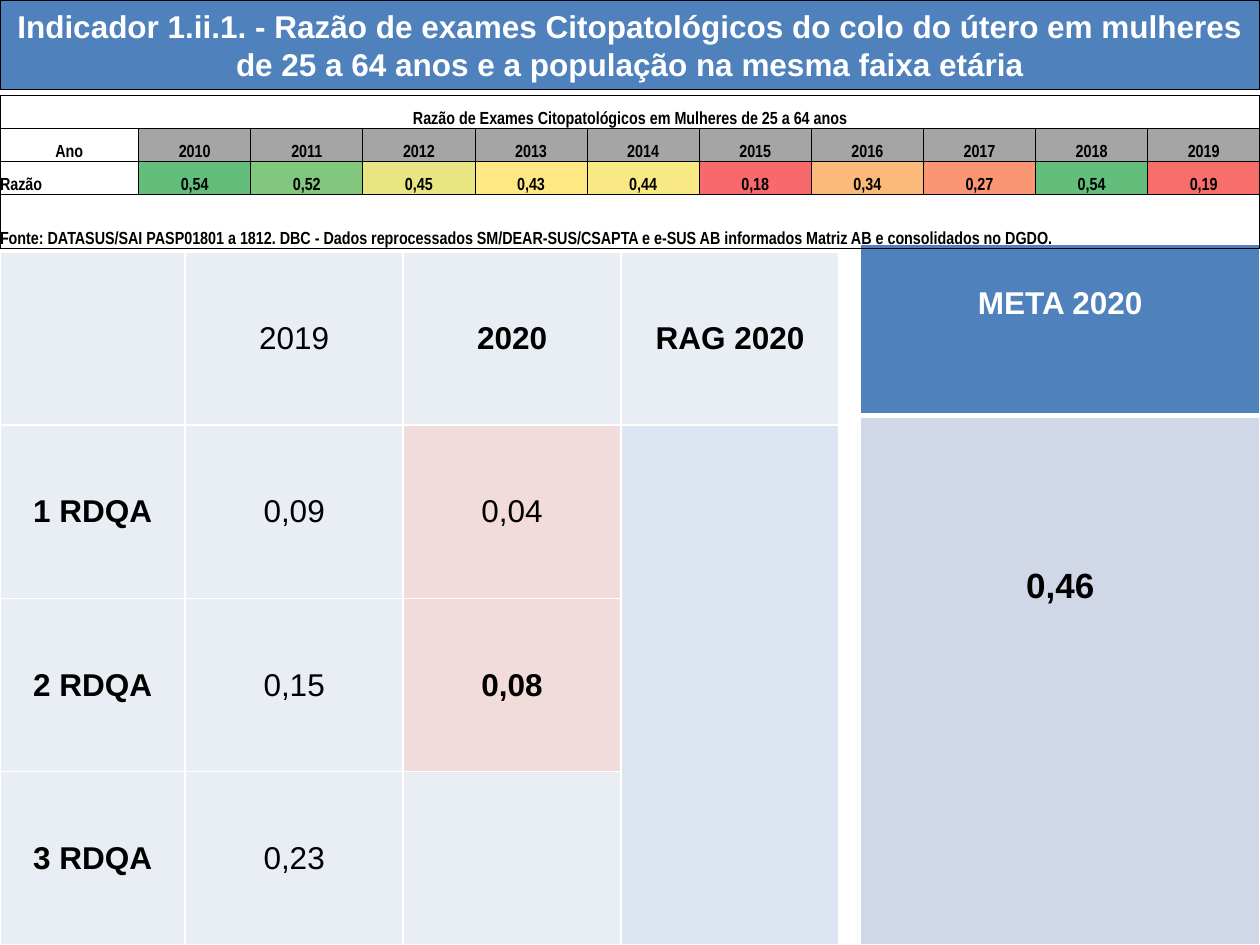
from dataclasses import dataclass

from lxml import etree
from pptx import Presentation
from pptx import util as u
from pptx.dml.color import RGBColor
from pptx.enum import text
from pptx.oxml.ns import qn

COLUMNS, ROWS = 100, 75  # slide grid
BLUE, GREY, PALE, PINK = "4F81BD", "A5A5A5", "E9EDF4", "F2DCDB"
LEFT, CENTER = text.PP_ALIGN.LEFT, text.PP_ALIGN.CENTER
TOP, MIDDLE, BOTTOM = (text.MSO_ANCHOR.TOP, text.MSO_ANCHOR.MIDDLE,
                       text.MSO_ANCHOR.BOTTOM)


def color(value):
    return RGBColor.from_string(value)


@dataclass
class Cell:
    text: str = ""
    fill: str = None
    bold: bool = True
    align: int = CENTER
    ink: str = "000000"
    size: int = None
    top: float = 0  # inner margin above the text, in grid rows


class Board:
    """Holds the style and the current slide."""

    font = "Arial"
    size = 18

    def __init__(self, presentation):
        self.column = presentation.slide_width / COLUMNS
        self.row = presentation.slide_height / ROWS
        self.slide = presentation.slides.add_slide(presentation.slide_layouts[5])

    def box(self, left, top, width, height):
        return (u.Emu(round(left * self.column)), u.Emu(round(top * self.row)),
                u.Emu(round(width * self.column)), u.Emu(round(height * self.row)))

    def set_text(self, frame, words, align, ink, bold, size=None, font=None):
        paragraph = frame.paragraphs[0]
        paragraph.text = words
        paragraph.alignment = align
        paragraph.font.name = font or self.font
        paragraph.font.size = u.Pt(size or self.size)
        paragraph.font.bold = bold
        paragraph.font.color.rgb = color(ink)

    def title(self, words, *place):
        shape = self.slide.shapes.title
        shape.left, shape.top, shape.width, shape.height = self.box(*place)
        shape.fill.solid()
        shape.fill.fore_color.rgb = color(BLUE)
        shape.line.color.rgb = color("000000")
        shape.line.width = u.Pt(0.75)
        frame = shape.text_frame
        frame.word_wrap = True
        frame.auto_size = text.MSO_AUTO_SIZE.NONE
        frame.vertical_anchor = MIDDLE
        self.set_text(frame, words, CENTER, "FFFFFF", True)

    def border(self, cell, side, ink, width):
        properties = cell._tc.get_or_add_tcPr()
        line = etree.SubElement(properties, qn("a:ln" + side), w=str(u.Pt(width)))
        fill = etree.SubElement(line, qn("a:solidFill"))
        etree.SubElement(fill, qn("a:srgbClr"), val=ink)

    def table(self, left, top, widths, heights, rows, anchor=MIDDLE, font=None,
              size=None, line="FFFFFF", weight=1, divider=None, merges=()):
        """Draw rows of Cell; divider is the weight of the inner row lines."""
        place = self.box(left, top, sum(widths), sum(heights))
        table = self.slide.shapes.add_table(len(heights), len(widths), *place).table
        table.first_row = table.horz_banding = False
        for column, width in zip(table.columns, widths):
            column.width = u.Emu(round(width * self.column))
        for row, height in zip(table.rows, heights):
            row.height = u.Emu(round(height * self.row))
        for r, row in enumerate(rows):
            for c, content in enumerate(row):
                cell = table.cell(r, c)
                cell.margin_left = cell.margin_right = cell.margin_bottom = 0
                cell.margin_top = u.Emu(round(content.top * self.row))
                cell.vertical_anchor = anchor
                inner = divider or weight
                weights = {"L": weight, "R": weight,
                           "T": inner if r else weight,
                           "B": inner if r < len(rows) - 1 else weight}
                for side, side_weight in weights.items():
                    self.border(cell, side, line, side_weight)
                if content.fill:
                    cell.fill.solid()
                    cell.fill.fore_color.rgb = color(content.fill)
                else:
                    cell.fill.background()
                self.set_text(cell.text_frame, content.text, content.align,
                              content.ink, content.bold, content.size or size, font)
        for first, last in merges:
            table.cell(*first).merge(table.cell(*last))


def main():
    presentation = Presentation()
    presentation.slide_width, presentation.slide_height = u.Inches(10), u.Inches(7.5)
    board = Board(presentation)

    board.title("Indicador 1.ii.1. - Razão de exames Citopatológicos do colo do "
                "útero em mulheres de 25 a 64 anos e a população na mesma faixa "
                "etária", 0, 0, 100, 7.1)

    # Four-monthly results
    results = [[Cell(fill=PALE), Cell("2019", PALE, False), Cell("2020", PALE),
                Cell("RAG 2020", PALE)]]
    for name, previous, current in [
            ("1 RDQA", "0,09", Cell("0,04", PINK, False)),
            ("2 RDQA", "0,15", Cell("0,08", PINK)),
            ("3 RDQA", "0,23", Cell(fill=PALE))]:
        results.append([Cell(name, PALE), Cell(previous, PALE, False), current,
                        Cell(fill="DCE6F2")])
    board.table(0, 20, [14.7] + [17.3] * 3, [13.75] * 4, results,
                merges=[((1, 3), (3, 3))])

    # Target
    board.table(68.3, 19.4, [31.7], [13.6, 42],
                [[Cell("META 2020", BLUE, ink="FFFFFF", top=3.3)],
                 [Cell("0,46", "D0D8E8", size=20, top=12)]],
                anchor=TOP, divider=3)

    # Yearly history, coloured from red (low) to green (high)
    history = [
        ("2010", "0,54", "63BE7B"), ("2011", "0,52", "81C77D"),
        ("2012", "0,45", "E9E583"), ("2013", "0,43", "FEE883"),
        ("2014", "0,44", "F8E984"), ("2015", "0,18", "F8696B"),
        ("2016", "0,34", "FCBA7A"), ("2017", "0,27", "FA9673"),
        ("2018", "0,54", "63BE7B"), ("2019", "0,19", "F86E6B")]
    count = len(history)
    blank = [Cell()] * count
    heading = Cell("Razão de Exames Citopatológicos em Mulheres de 25 a 64 anos")
    footnote = Cell("Fonte: DATASUS/SAI PASP01801 a 1812. DBC - Dados reprocessados "
                    "SM/DEAR-SUS/CSAPTA e e-SUS AB informados Matriz AB e "
                    "consolidados no DGDO.", align=LEFT)
    board.table(
        0, 7.55, [11] + [8.9] * count, [2.63] * 3 + [4.25],
        [[heading] + blank,
         [Cell("Ano")] + [Cell(year, GREY) for year, _, _ in history],
         [Cell("Razão", align=LEFT)] + [Cell(ratio, fill) for _, ratio, fill in history],
         [footnote] + blank],
        anchor=BOTTOM, font="Arial Narrow", size=10, line="000000", weight=0.5,
        merges=[((row, 0), (row, count)) for row in (0, 3)])

    presentation.save("out.pptx")


if __name__ == "__main__":
    main()
